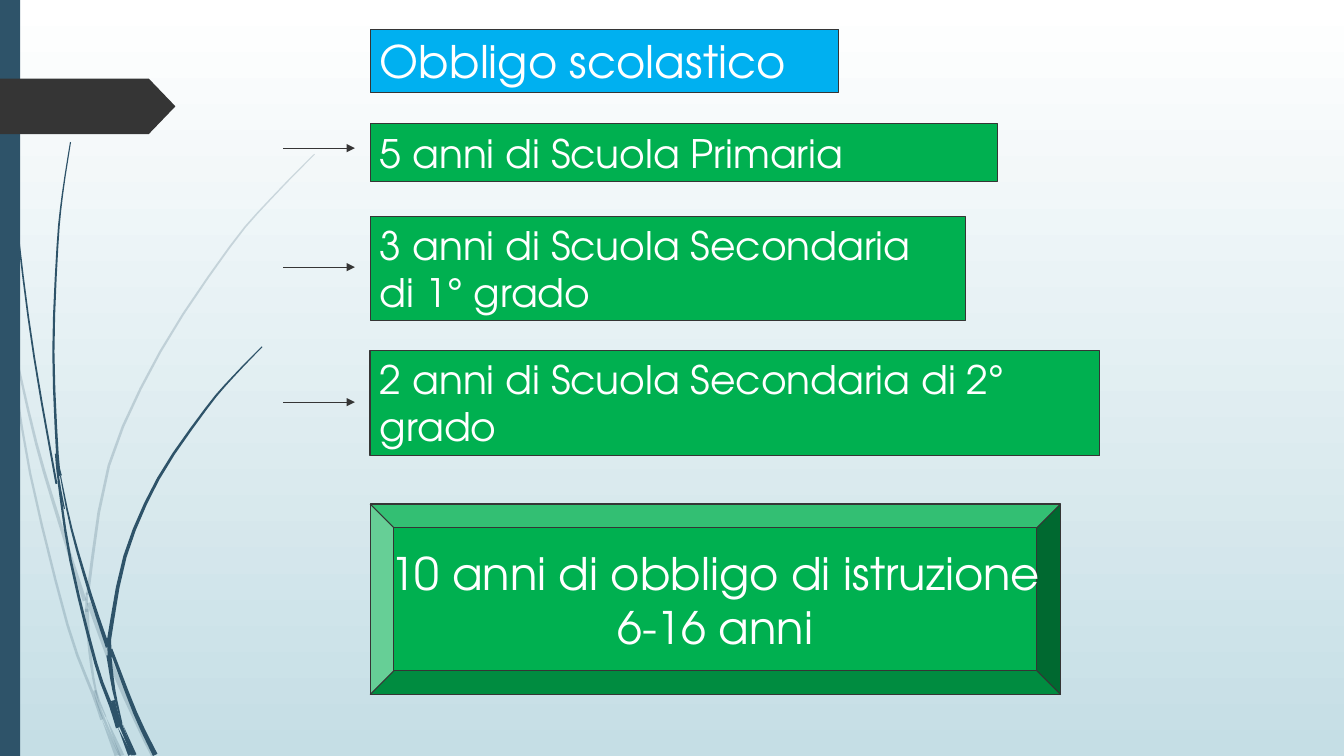
import math

from lxml import etree
from pptx import Presentation
from pptx import util as u
from pptx.dml.color import RGBColor
from pptx.enum import shapes, text
from pptx.oxml import ns

COLORS = {
    "sky_top": "FFFFFF",
    "sky_bottom": "C5DEE5",
    "grass": "2E5369",
    "ink": "353535",
    "title": "00B0F0",
    "stage": "00B050",
    "letters": "FFFFFF",
}
FONT = "TeX Gyre Adventor"
WIDTH, HEIGHT = 13.33, 7.5

PALE_BLADES = [
    ([(0, 2.9), (0.06, 3.2), (0.11, 3.49)], 0.04, 0),
    ([(0.14, 3.45), (0.36, 4.4), (0.6, 5.21), (0.84, 5.96)], 0.02, 0.04),
    ([(0.88, 5.98), (1.07, 6.5), (1.25, 6.93), (1.52, 7.5)], 0.04, 0.05),
    ([(1.05, 7.11), (1.21, 7.5)], 0, 0.05),
    ([(0.11, 3.5), (0.3, 4.7), (0.67, 6.2), (0.92, 6.88), (1.01, 7.14)], 0.02, 0.03),
    ([(0.86, 6.04), (0.89, 6.46), (0.95, 6.85), (1.05, 7.11)], 0.04, 0.01),
    ([(3.12, 1.53), (2.68, 1.98), (2.28, 2.45), (1.59, 3.49), (1.08, 4.62),
      (0.87, 5.9)], 0.01, 0.03),
    ([(1.01, 7.14), (1.16, 7.5)], 0, 0.05),
    ([(0.86, 5.88), (0.86, 6.07)], 0.02, 0.03),
    ([(0.94, 6.85), (1, 7.06), (1.19, 7.5)], 0.03, 0.02),
]
DARK_BLADES = [
    ([(0.03, 0), (0.07, 1.1), (0.18, 2.33), (0.34, 3.55), (0.56, 4.8)], 0.01, 0.02),
    ([(0.6, 4.72), (0.71, 5.25), (0.9, 5.91), (1.07, 6.42)], 0.01, 0.04),
    ([(1.1, 6.44), (1.34, 7.07), (1.54, 7.49)], 0.03, 0.05),
    ([(0.58, 4.77), (0.7, 5.56), (0.95, 6.58), (1.1, 7), (1.17, 7.22)], 0.02, 0.04),
    ([(0.7, 1.41), (0.62, 1.93), (0.57, 2.45), (0.53, 3.49), (0.57, 4.51),
      (0.6, 4.72)], 0.01, 0.03),
    ([(1.22, 7.19), (1.34, 7.49)], 0, 0.03),
    ([(0.56, 4.5), (0.58, 4.75), (0.64, 5.05)], 0.03, 0.01),
    ([(2.6, 3.44), (2.31, 3.74), (2.04, 4.06), (1.57, 4.75), (1.24, 5.52),
      (1.08, 6.36)], 0.01, 0.04),
    ([(1.17, 7.22), (1.29, 7.49)], 0, 0.04),
    ([(1.08, 6.5), (1.13, 6.85), (1.21, 7.18)], 0.05, 0.01),
    ([(1.08, 6.33), (1.09, 6.52)], 0.04, 0.04),
    ([(1.12, 6.95), (1.18, 7.15), (1.32, 7.49)], 0.04, 0.03),
]
STAGES = [
    ("5 anni di Scuola Primaria", 1.23, 6.22, 0.57, 1.47),
    ("3 anni di Scuola Secondaria di 1° grado", 2.15, 5.91, 1.03, 2.65),
    ("2 anni di Scuola Secondaria di 2° grado", 3.48, 7.24, 1.04, 3.99),
]


def rgb(name):
    return RGBColor.from_string(COLORS[name])


def paint(shape, fill, line=None):
    shape.shadow.inherit = False
    shape.fill.solid()
    shape.fill.fore_color.rgb = rgb(fill)
    if line:
        shape.line.color.rgb = rgb(line)
        shape.line.width = u.Pt(0.75)
    else:
        shape.line.fill.background()


def add_box(slide, kind, box, fill, line=None):
    shape = slide.shapes.add_shape(kind, *map(u.Inches, box))
    paint(shape, fill, line)
    return shape


def write(shape, words, size=28, align=text.PP_ALIGN.LEFT,
          anchor=text.MSO_ANCHOR.TOP, wrap=True):
    frame = shape.text_frame
    frame.word_wrap = wrap
    frame.vertical_anchor = anchor
    frame.text = words
    for paragraph in frame.paragraphs:
        paragraph.alignment = align
        paragraph.font.name = FONT
        paragraph.font.size = u.Pt(size)
        paragraph.font.color.rgb = rgb("letters")


def smooth_curve(knots, steps=3):
    if len(knots) == 2:
        return knots
    padded = [knots[0], *knots, knots[-1]]
    curve = []
    for a, b, c, d in zip(padded, padded[1:], padded[2:], padded[3:]):
        for step in range(steps):
            t = step / steps
            curve.append(tuple(
                0.5 * (2 * q + (r - p) * t + (2 * p - 5 * q + 4 * r - s) * t ** 2
                       + (3 * q - p - 3 * r + s) * t ** 3)
                for p, q, r, s in zip(a, b, c, d)))
    return curve + [knots[-1]]


def draw_blade(slide, knots, tip, root, opacity):
    spine = smooth_curve(knots)
    last = len(spine) - 1
    left, right = [], []
    for i, (x, y) in enumerate(spine):
        before, after = spine[max(i - 1, 0)], spine[min(i + 1, last)]
        dx, dy = after[0] - before[0], after[1] - before[1]
        half = (tip + (root - tip) * i / last) / 2 / math.hypot(dx, dy)
        for edge, side in ((left, 1), (right, -1)):
            edge.append((u.Inches(max(x - side * dy * half, 0)),
                         u.Inches(min(max(y + side * dx * half, 0), HEIGHT))))
    outline = left + right[::-1]
    builder = slide.shapes.build_freeform(*outline[0])
    builder.add_line_segments(outline[1:], close=True)
    blade = builder.convert_to_shape()
    paint(blade, "grass")
    if opacity < 100:
        color = blade.fill._xPr.find(".//" + ns.qn("a:srgbClr"))
        etree.SubElement(color, ns.qn("a:alpha")).set("val", str(opacity * 1000))


def draw_backdrop(slide):
    sky = slide.background.fill
    sky.gradient()
    sky.gradient_angle = 270
    for stop, name in zip(sky.gradient_stops, ("sky_top", "sky_bottom")):
        stop.color.rgb = rgb(name)
    for blades, opacity in ((PALE_BLADES, 20), (DARK_BLADES, 100)):
        for knots, tip, root in blades:
            draw_blade(slide, knots, tip, root, opacity)
    add_box(slide, shapes.MSO_SHAPE.RECTANGLE, (0, 0, 0.2, HEIGHT), "grass")
    pennant = add_box(slide, shapes.MSO_SHAPE.PENTAGON, (0, 0.78, 1.74, 0.55), "ink")
    pennant.adjustments[0] = 0.48


def draw_arrow(slide, left, right, y):
    arrow = slide.shapes.add_connector(
        shapes.MSO_CONNECTOR.STRAIGHT, *map(u.Inches, (left, y, right, y)))
    arrow.line.color.rgb = rgb("ink")
    arrow.line.width = u.Pt(0.75)
    etree.SubElement(arrow.line._get_or_add_ln(), ns.qn("a:tailEnd")).set("type", "triangle")
    etree.SubElement(arrow._element.spPr, ns.qn("a:effectLst"))


def draw_stage(slide, words, box, arrow_y):
    left = box[0]
    draw_arrow(slide, left - 0.86, left - 0.15, arrow_y)
    stage = add_box(slide, shapes.MSO_SHAPE.RECTANGLE, box, "stage", "ink")
    write(stage, words)


def draw_total(slide, box):
    total = add_box(slide, shapes.MSO_SHAPE.BEVEL, box, "stage", "ink")
    write(total, "10 anni di obbligo di istruzione\n6-16 anni", size=32,
          align=text.PP_ALIGN.CENTER, anchor=text.MSO_ANCHOR.MIDDLE, wrap=False)


def main():
    deck = Presentation()
    deck.slide_width, deck.slide_height = u.Inches(WIDTH), u.Inches(HEIGHT)
    slide = deck.slides.add_slide(deck.slide_layouts[6])
    left = 3.67
    draw_backdrop(slide)
    title = add_box(slide, shapes.MSO_SHAPE.RECTANGLE, (left, 0.29, 4.65, 0.63), "title", "ink")
    write(title, "Obbligo scolastico", size=32)
    for words, top, width, height, arrow_y in STAGES:
        draw_stage(slide, words, (left, top, width, height), arrow_y)
    draw_total(slide, (left, 5, 6.85, 1.89))
    deck.save("out.pptx")


if __name__ == "__main__":
    main()
